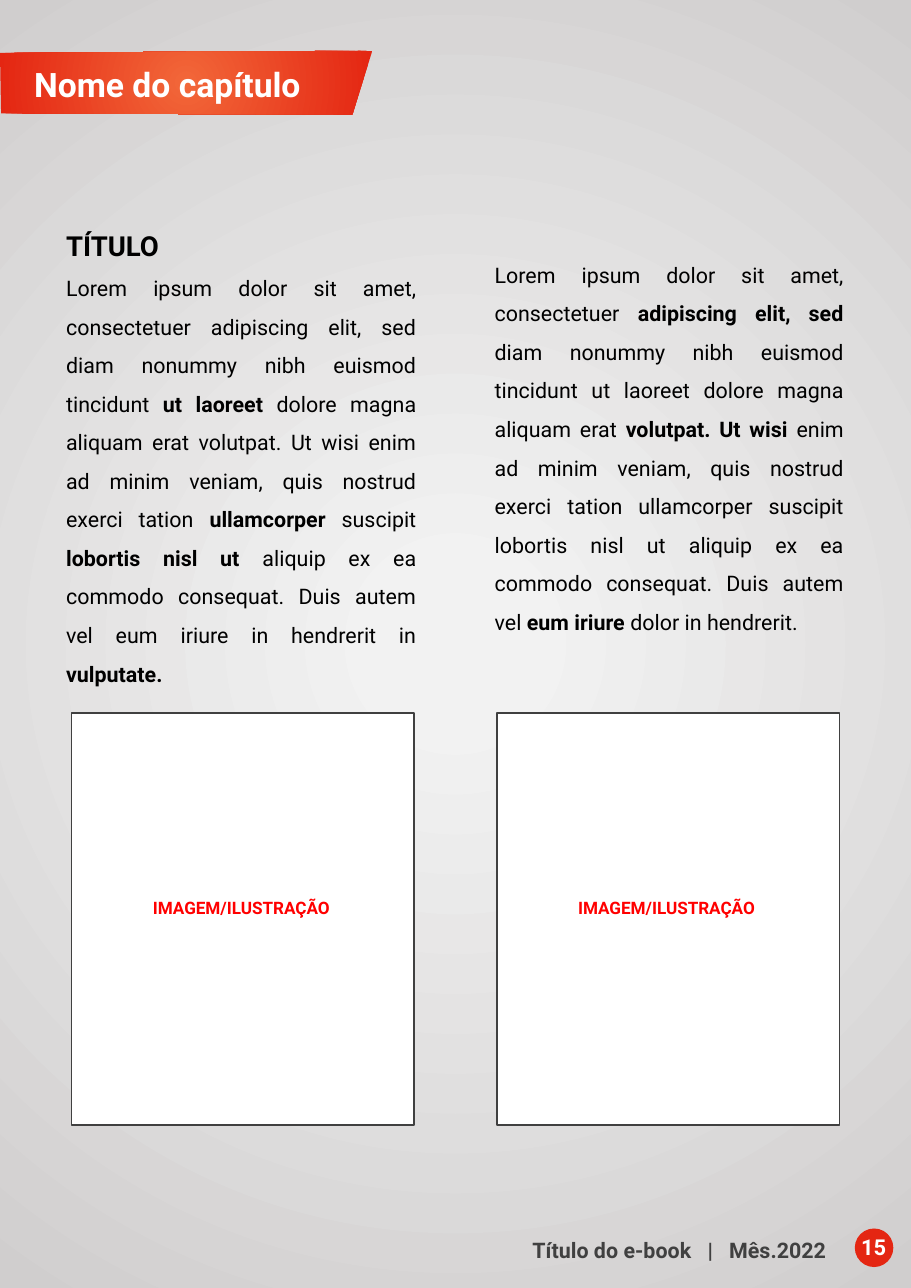
from dataclasses import dataclass

from lxml.etree import SubElement
from pptx import Presentation
from pptx.dml.color import RGBColor
from pptx.enum.shapes import MSO_SHAPE
from pptx.enum.text import MSO_ANCHOR, MSO_AUTO_SIZE, PP_ALIGN
from pptx.oxml.ns import qn
from pptx.util import Pt

PX = 9144  # 100 px to the inch
PAGE_WIDTH, PAGE_HEIGHT = 827, 1169
TWO_CONTENT = 3


@dataclass(frozen=True)
class Theme:
    font: str = "Roboto"
    ink: str = "000000"
    paper: str = "FFFFFF"
    grey: str = "404040"
    red: str = "E42612"
    orange: str = "F26739"
    caption_red: str = "FF0000"
    page_centre: str = "F2F2F2"
    page_edge: str = "D0CECE"
    chapter: float = 22
    heading: float = 18
    body: float = 14
    caption: float = 11.2
    page_number: float = 14.3


THEME = Theme()

LEFT_TEXT = (
    "Lorem ipsum dolor sit amet, consectetuer adipiscing elit, sed diam nonummy nibh "
    "euismod tincidunt *ut laoreet *dolore magna aliquam erat volutpat. Ut wisi enim ad "
    "minim veniam, quis nostrud exerci tation *ullamcorper *suscipit *lobortis nisl ut "
    "*aliquip ex ea commodo consequat. Duis autem vel eum iriure in hendrerit in "
    "*vulputate.*"
)
RIGHT_TEXT = (
    "Lorem ipsum dolor sit amet, consectetuer *adipiscing elit, sed *diam nonummy nibh "
    "euismod tincidunt ut laoreet dolore magna aliquam erat *volutpat. Ut wisi *enim ad "
    "minim veniam, quis nostrud exerci tation ullamcorper suscipit lobortis nisl ut "
    "aliquip ex ea commodo consequat. Duis autem vel *eum iriure *dolor in hendrerit."
)


def place(shape, box):
    shape.left, shape.top, shape.width, shape.height = (n * PX for n in box)


def write(shape, text, size, color=THEME.ink, bold=False, align=PP_ALIGN.LEFT,
          spacing=1.0, tracking=0):
    """Add one paragraph; text between asterisks switches weight and takes the tracking."""
    frame = shape.text_frame
    frame.word_wrap = True
    frame.auto_size = MSO_AUTO_SIZE.NONE
    frame.vertical_anchor = MSO_ANCHOR.TOP
    paragraph = frame.paragraphs[0] if not frame.text else frame.add_paragraph()
    paragraph.alignment = align
    paragraph.line_spacing = spacing
    paragraph.space_before = Pt(0)
    properties = paragraph._p.get_or_add_pPr()
    properties.set("marL", "0")
    properties.set("indent", "0")
    SubElement(properties, qn("a:buNone"))
    for index, part in enumerate(text.split("*")):
        if not part:
            continue
        marked = index % 2 == 1
        run = paragraph.add_run()
        run.text = part
        run.font.name = THEME.font
        run.font.size = Pt(size)
        run.font.bold = bold != marked
        run.font.color.rgb = RGBColor.from_string(color)
        if marked and tracking:
            run._r.get_or_add_rPr().set("spc", str(tracking * 100))


def add_text(slide, box, text, size, **formatting):
    shape = slide.shapes.add_textbox(*(n * PX for n in box))
    write(shape, text, size, **formatting)
    return shape


def add_panel(slide, preset, box, fill=None, line=None):
    shape = slide.shapes.add_shape(preset, *(n * PX for n in box))
    shape.shadow.inherit = False
    if fill:
        shape.fill.solid()
        shape.fill.fore_color.rgb = RGBColor.from_string(fill)
    if line:
        shape.line.color.rgb = RGBColor.from_string(line)
        shape.line.width = Pt(1)
    else:
        shape.line.fill.background()
    return shape


def fill_radial(shape, *stops):
    shape.fill.gradient()
    for stop, (position, color) in zip(shape.fill.gradient_stops, stops):
        stop.position = position
        stop.color.rgb = RGBColor.from_string(color)
    gradient = shape.element.spPr.find(qn("a:gradFill"))
    gradient.remove(gradient.find(qn("a:lin")))
    circle = SubElement(gradient, qn("a:path"), path="circle")
    SubElement(circle, qn("a:fillToRect"), l="50000", t="50000", r="50000", b="50000")


def use_placeholder(slide, index, box):
    """Bring a layout placeholder to the front and place it."""
    shape = slide.placeholders[index]
    slide.shapes.element.append(shape.element)
    place(shape, box)
    return shape


def add_backdrop(slide, box):
    backdrop = add_panel(slide, MSO_SHAPE.RECTANGLE, box)
    fill_radial(backdrop, (0.09, THEME.page_centre), (1, THEME.page_edge))


def add_chapter_banner(slide, box):
    left, top, width, height = box
    builder = slide.shapes.build_freeform(left, top + 2, scale=PX)
    builder.add_line_segments([
        (left + width, top),
        (left + width - 18, top + height),
        (left + 1, top + height - 1),
    ])
    banner = builder.convert_to_shape()
    banner.shadow.inherit = False
    banner.line.fill.background()
    fill_radial(banner, (0, THEME.orange), (1, THEME.red))
    title = use_placeholder(slide, 0, (left + 21, top + 7, 268, 47))
    write(title, "Nome do capítulo", THEME.chapter, color=THEME.paper, bold=True)


def add_column(slide, index, box, text, heading=None):
    column = use_placeholder(slide, index, box)
    layout = dict(align=PP_ALIGN.JUSTIFY, spacing=1.5)
    if heading:
        write(column, heading, THEME.heading, bold=True, **layout)
    write(column, text, THEME.body, **layout)


def add_image_frame(slide, box):
    left, top, _, _ = box
    add_panel(slide, MSO_SHAPE.RECTANGLE, box, THEME.paper, THEME.grey)
    add_text(slide, (left + 64, top + 163, 210, 29), "IMAGEM/ILUSTRAÇÃO",
             THEME.caption, color=THEME.caption_red, bold=True)


def add_footer(slide, box):
    left, top, width, _ = box
    badge_left = left + width - 51
    footer = add_text(slide, (left, top + 3, width - 51, 34),
                      "Título do e-book* *|* *Mês.2022", THEME.body, color=THEME.grey,
                      bold=True, align=PP_ALIGN.RIGHT, tracking=7)
    footer.text_frame.margin_right = 26 * PX
    add_panel(slide, MSO_SHAPE.OVAL, (badge_left, top, 35, 35), THEME.red)
    add_text(slide, (badge_left - 4, top, 50, 34), "15", THEME.page_number,
             color=THEME.paper, bold=True)


def main():
    presentation = Presentation()
    presentation.slide_width = PAGE_WIDTH * PX
    presentation.slide_height = PAGE_HEIGHT * PX
    slide = presentation.slides.add_slide(presentation.slide_layouts[TWO_CONTENT])

    add_backdrop(slide, (0, 0, PAGE_WIDTH, PAGE_HEIGHT))
    add_chapter_banner(slide, (0, 46, 338, 58))
    add_column(slide, 1, (50, 188, 338, 405), LEFT_TEXT, heading="TÍTULO")
    add_column(slide, 2, (439, 221, 337, 371), RIGHT_TEXT)
    for left in (65, 451):
        add_image_frame(slide, (left, 647, 311, 374))
    add_footer(slide, (363, 1115, 464, 37))
    presentation.save("out.pptx")


if __name__ == "__main__":
    main()
